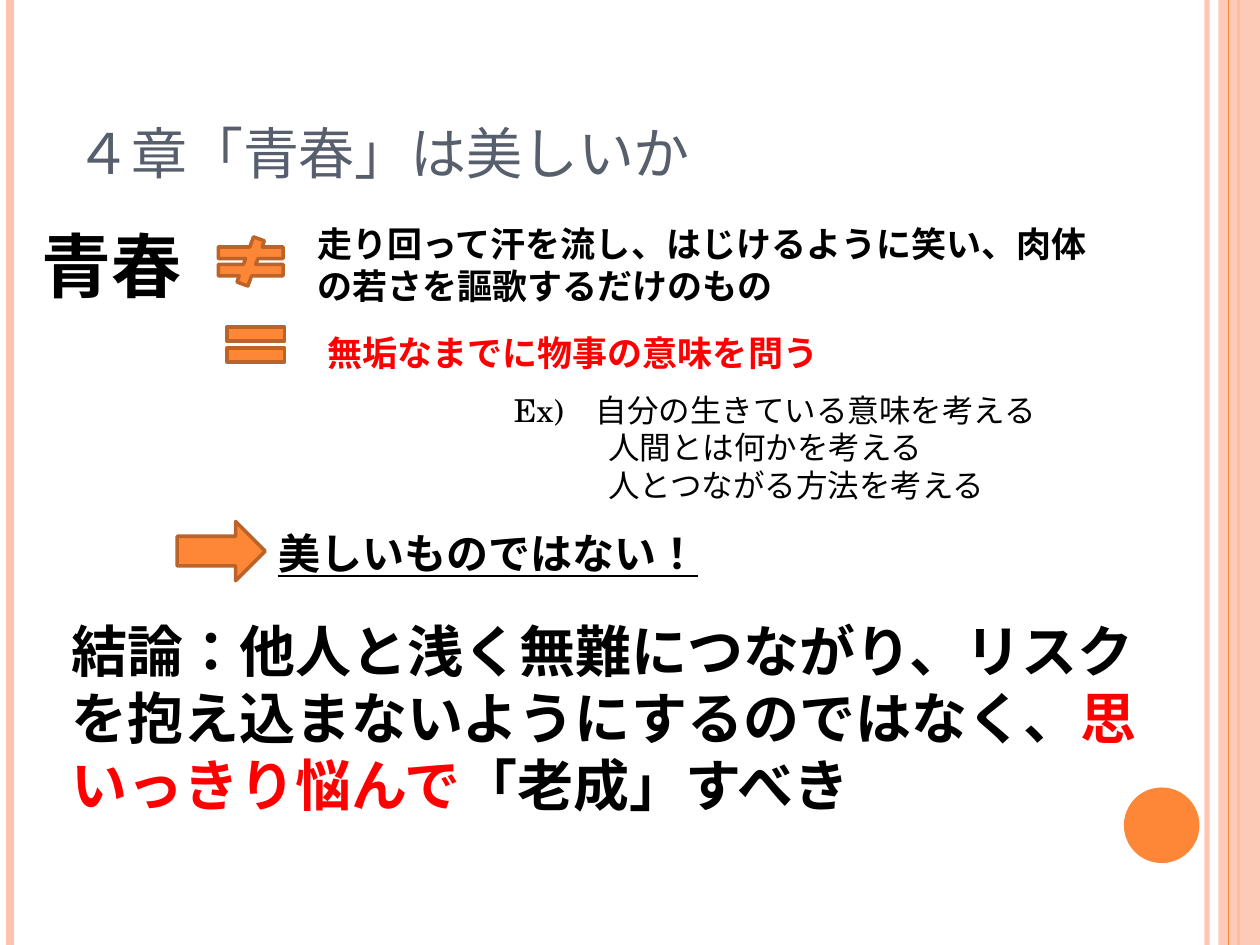
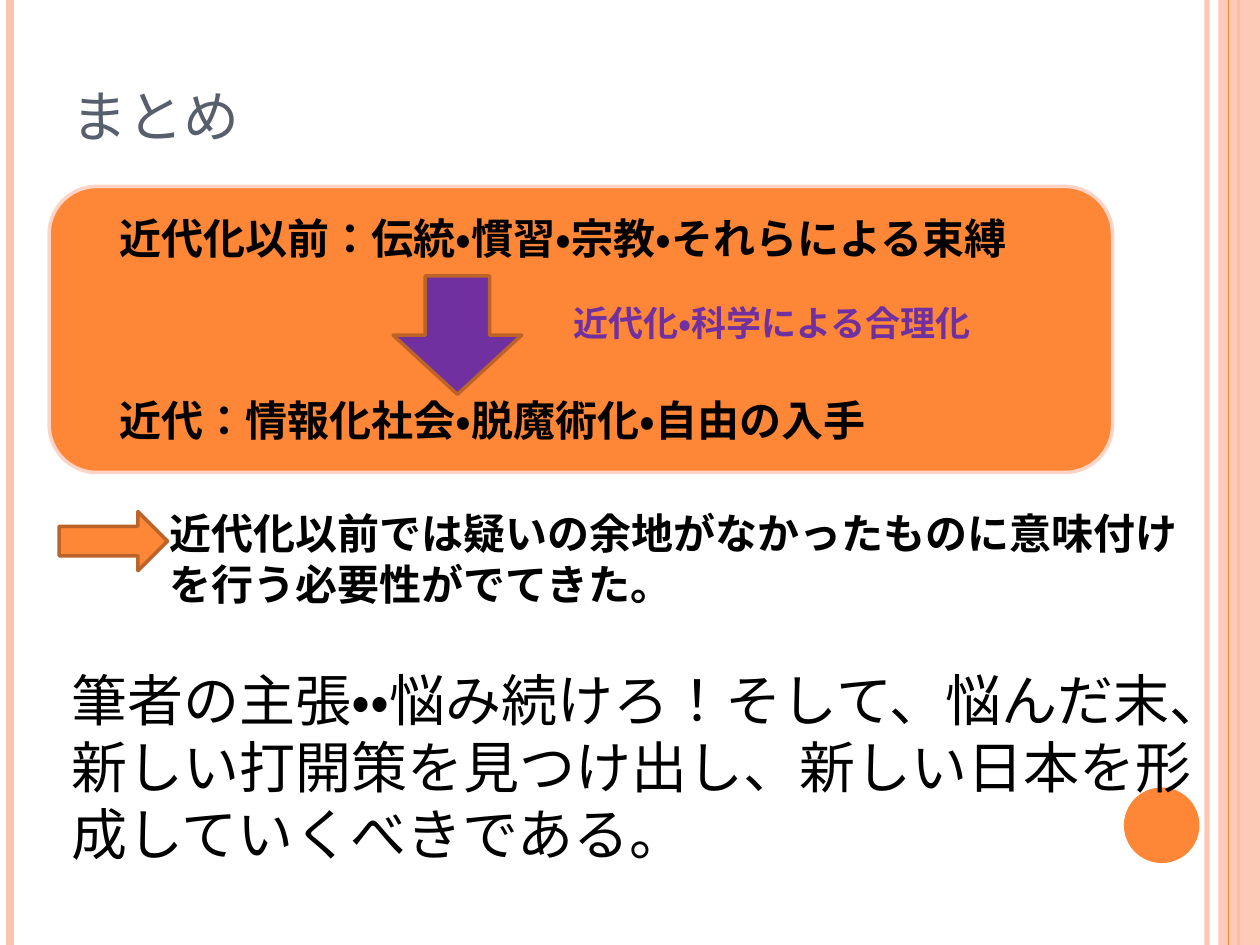
import lxml.etree
import pptx
import pptx.dml.color
import pptx.enum.lang
import pptx.enum.shapes
import pptx.enum.text
import pptx.oxml.ns
import pptx.util

Pt = pptx.util.Pt
PRESET = pptx.enum.shapes.MSO_SHAPE
AUTO_SIZE = pptx.enum.text.MSO_AUTO_SIZE
qn = pptx.oxml.ns.qn

COLOURS = {
    "orange": "FE8637",
    "dark orange": "BC6329",
    "pink": "FEC3AE",
    "pale pink": "FFD4C7",
    "slate": "575F6D",
    "purple": "7030A0",
    "red": "FF0000",
    "black": "000000",
}
RGB = {name: pptx.dml.color.RGBColor.from_string(value) for name, value in COLOURS.items()}
SERIF = "TeX Gyre Schola"
SANS = "Arial"
WIDTH, HEIGHT = 720, 540


def add_shape(slide, preset, box, fill="orange", line="dark orange"):
    """Draw a preset shape; box is left, top, width, height in points."""
    shape = slide.shapes.add_shape(preset, *map(Pt, box))
    shape.shadow.inherit = False
    shape.fill.solid()
    shape.fill.fore_color.rgb = RGB[fill]
    if line:
        shape.line.color.rgb = RGB[line]
        shape.line.width = Pt(2)
    else:
        shape.line.fill.background()
    return shape


def write_text(shape, paragraphs, size, font=SERIF, **font_format):
    """Fill a shape; each paragraph is a list of (text, colour) runs."""
    frame = shape.text_frame
    frame.word_wrap = True
    for number, runs in enumerate(paragraphs):
        paragraph = frame.add_paragraph() if number else frame.paragraphs[0]
        paragraph.alignment = pptx.enum.text.PP_ALIGN.LEFT
        for text, colour in runs:
            run = paragraph.add_run()
            run.text = text
            run.font.color.rgb = RGB[colour]
            values = {"name": font, "size": Pt(size),
                      "language_id": pptx.enum.lang.MSO_LANGUAGE_ID.JAPANESE, **font_format}
            for name, value in values.items():
                setattr(run.font, name, value)
    return frame


presentation = pptx.Presentation()
presentation.slide_width, presentation.slide_height = Pt(WIDTH), Pt(HEIGHT)
layout = presentation.slide_layouts[5]
for placeholder in list(layout.placeholders):
    if placeholder.placeholder_format.type != pptx.enum.shapes.PP_PLACEHOLDER.TITLE:
        placeholder.element.getparent().remove(placeholder.element)

# Slides and titles
titles = [
    ("４章「青春」は美しいか", (36, 21.6, 588, 90)),
    ("まとめ", (33.84, 0, 588, 90)),
]
slides = []
for text, box in titles:
    slide = presentation.slides.add_slide(layout)
    title = slide.shapes.title
    title.left, title.top, title.width, title.height = map(Pt, box)
    frame = write_text(title, [[(text, "slate")]], 40)
    frame.auto_size = AUTO_SIZE.NONE
    frame.vertical_anchor = pptx.enum.text.MSO_ANCHOR.BOTTOM
    frame.paragraphs[0].runs[0]._r.get_or_add_rPr().set("cap", "small")
    slides.append(slide)
youth_slide, summary_slide = slides

# Side bands and disc, moved to the layout so that both slides show them
decorations = []
for x, colour, width in [(689.76, "pink", 3), (5.76, "pink", 4.5),
                         (707.76, "orange", 1.5), (702, "orange", 0.75)]:
    line = youth_slide.shapes.add_connector(
        pptx.enum.shapes.MSO_CONNECTOR.STRAIGHT, Pt(x), Pt(0), Pt(x), Pt(HEIGHT))
    line.line.color.rgb = RGB[colour]
    line.line.width = Pt(width)
    lxml.etree.SubElement(line.element.spPr, qn("a:effectLst"))
    decorations.append(line)
band = add_shape(youth_slide, PRESET.RECTANGLE, (696.24, 0, 23.76, HEIGHT), "pink", None)
disc = add_shape(youth_slide, PRESET.OVAL, (642.24, 450, 43.2, 43.2), line=None)
for shape, opacity in [(decorations[0], 93), (band, 87)]:
    colour = next(shape.element.iter(qn("a:srgbClr")))
    lxml.etree.SubElement(colour, qn("a:alpha"), val=str(opacity * 1000))
decorations.insert(3, band)
decorations.append(disc)
for position, shape in enumerate(decorations, start=2):
    layout.shapes.element.insert(position, shape.element)

# Symbols and panel
for slide, preset, box, fill, line in [
    (youth_slide, PRESET.MATH_NOT_EQUAL, (118.08, 135.36, 50.4, 28.08), "orange", "dark orange"),
    (youth_slide, PRESET.MATH_EQUAL, (123.84, 180, 44.64, 33.84), "orange", "dark orange"),
    (youth_slide, PRESET.RIGHT_ARROW, (101.2, 298, 50.4, 33.84), "orange", "dark orange"),
    (summary_slide, PRESET.ROUNDED_RECTANGLE, (28.08, 106.56, 607.68, 163.44), "orange", "pale pink"),
    (summary_slide, PRESET.DOWN_ARROW, (224.64, 157.68, 73.44, 67.68), "purple", "dark orange"),
    (summary_slide, PRESET.RIGHT_ARROW, (33.84, 292.32, 61.92, 33.84), "orange", "dark orange"),
]:
    add_shape(slide, preset, box, fill, line)

# Text boxes
frames = {}
for name, slide, box, paragraphs, size, font, font_format in [
    ("youth", youth_slide, (16.56, 123.84, 123.84, 50.4),
     [[("青春", "black")]], 40, SERIF, {"bold": True}),
    ("not youth", youth_slide, (174.24, 123.84, 455.76, 55.44),
     [[("走り回って汗を流し、はじけるように笑い、肉体の若さを謳歌するだけのもの", "black")]],
     20, SERIF, {"bold": True}),
    ("meaning", youth_slide, (180, 185.76, 421.92, 31.68),
     [[("無垢なまでに物事の意味を問う", "red")]], 20, SERIF, {"bold": True}),
    ("examples", youth_slide, (286.56, 219.6, 388.08, 72.72),
     [[("Ex)　自分の生きている意味を考える", "black")],
      [("人間とは何かを考える", "black")],
      [("人とつながる方法を考える", "black")]], 18, SERIF, {}),
    ("not beautiful", youth_slide, (151.92, 298.08, 416.16, 36.72),
     [[("美しいものではない！", "black")]], 24, SERIF, {"bold": True, "underline": True}),
    ("conclusion", youth_slide, (33.84, 348.48, 652.32, 123.84),
     [[("結論：他人と浅く無難につながり、リスクを抱え込まないようにするのではなく、", "black"),
       ("思いっきり悩んで", "red"), ("「老成」すべき", "black")]], 32, SERIF, {"bold": True}),
    ("eras", summary_slide, (39.6, 118.08, 588.24, 149.76),
     [[("近代化以前：伝統・慣習・宗教・それらによる束縛", "black")],
      [("近代：情報化社会・脱魔術化・自由の入手", "black")]], 24, SERIF, {"bold": True}),
    ("need", summary_slide, (90, 286.56, 596.16, 65.52),
     [[("近代化以前では疑いの余地がなかったものに意味付けを行う必要性がでてきた。", "black")]],
     24, SANS, {"bold": True}),
    ("cause", summary_slide, (320.4, 168.48, 275.76, 31.68),
     [[("近代化・科学による合理化", "purple")]], 20, SANS, {"bold": True}),
    ("claim", summary_slide, (33.84, 376.56, 658.08, 123.84),
     [[("筆者の主張・・悩み続けろ！そして、悩んだ末、新しい打開策を見つけ出し、"
        "新しい日本を形成していくべきである。", "black")]], 32, SANS, {}),
]:
    text_box = slide.shapes.add_textbox(*map(Pt, box))
    frames[name] = write_text(text_box, paragraphs, size, font, **font_format)
    frames[name].auto_size = AUTO_SIZE.NONE if name in ("youth", "eras") else AUTO_SIZE.SHAPE_TO_FIT_TEXT

for paragraph in frames["examples"].paragraphs[1:]:
    paragraph._p.get_or_add_pPr().set("marL", str(Pt(54)))
frames["eras"].margin_left = Pt(28.8)
frames["eras"].paragraphs[1].space_before = Pt(75.2)

presentation.save("out.pptx")
